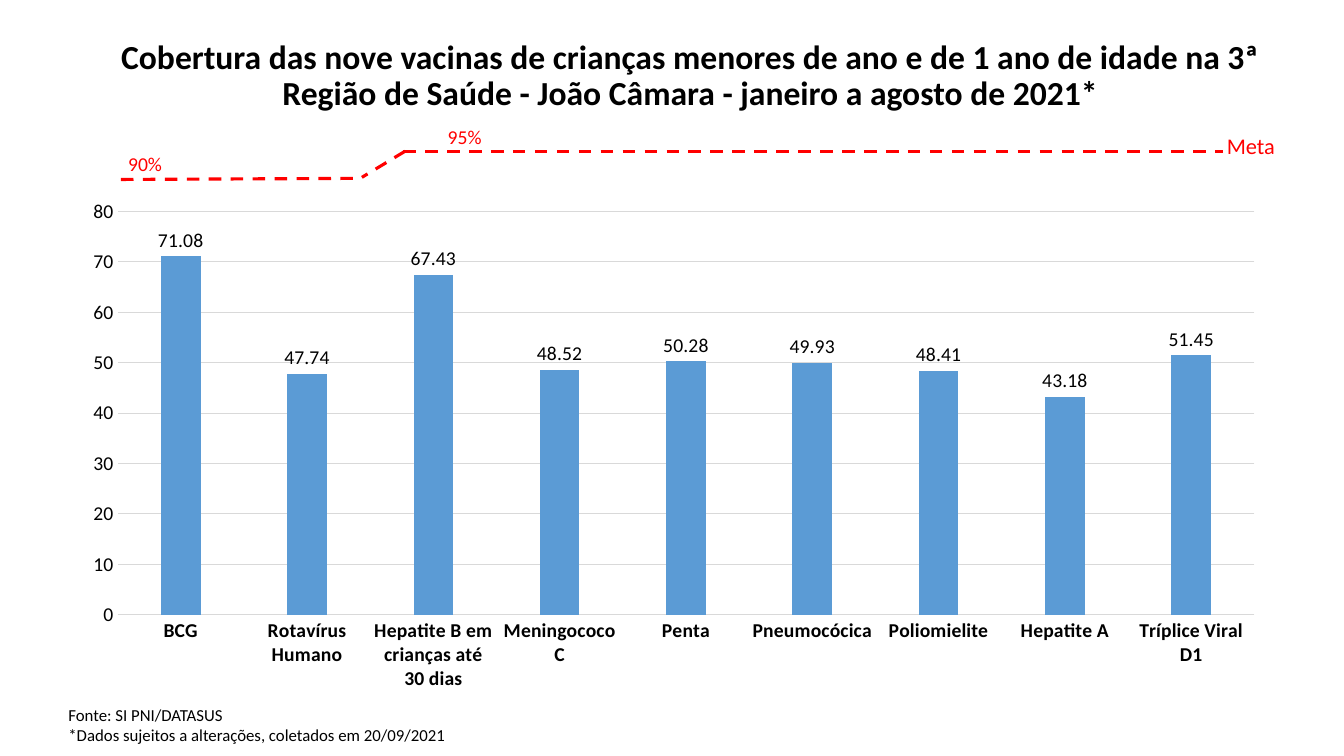
from lxml.etree import SubElement
from pptx import Presentation
from pptx.chart.data import CategoryChartData as Data
from pptx.dml.color import RGBColor as Rgb
from pptx.enum.chart import XL_CHART_TYPE as Kind
from pptx.enum.chart import XL_LABEL_POSITION as Spot
from pptx.enum.chart import XL_TICK_MARK as Tick
from pptx.enum.dml import MSO_LINE as Dash
from pptx.enum.shapes import MSO_CONNECTOR as Link
from pptx.enum.text import MSO_ANCHOR as Anchor
from pptx.enum.text import MSO_AUTO_SIZE as Auto
from pptx.enum.text import PP_ALIGN as Align
from pptx.oxml import parse_xml
from pptx.oxml.ns import nsdecls, qn
from pptx.util import Pt

BLACK, RED, GREY, BLUE = "000000", "FF0000", "D9D9D9", "5B9BD5"


def style(font, size, color=BLACK, bold=False):
    for key, val in {"name": "Calibri", "size": Pt(size), "bold": bold}.items():
        setattr(font, key, val)
    font.color.rgb = Rgb.from_string(color)


def stroke(line, color, width):
    line.color.rgb = Rgb.from_string(color)
    line.width = Pt(width)


deck = Presentation()
deck.slide_width, deck.slide_height = Pt(960), Pt(540)
slide = deck.slides.add_slide(deck.slide_layouts[5])
shapes = slide.shapes

# Title, raised by a deep bottom inset
title = shapes.title
place = {"left": 79, "top": 16, "width": 828, "height": 104}
for key, val in place.items():
    setattr(title, key, Pt(val))
frame = title.text_frame
frame.text = (
    "Cobertura das nove vacinas de crianças menores de ano e de 1 ano de idade "
    "na 3ª Região de Saúde - João Câmara - janeiro a agosto de 2021*"
)
look = {
    "word_wrap": True,
    "auto_size": Auto.NONE,
    "vertical_anchor": Anchor.MIDDLE,
    "margin_bottom": Pt(30),
}
for key, val in look.items():
    setattr(frame, key, val)
para = frame.paragraphs[0]
para.alignment = Align.CENTER
para.line_spacing = 0.9
style(para.runs[0].font, 24, bold=True)

# Coverage by vaccine
cover = {
    "BCG": 71.08,
    "Rotavírus Humano": 47.74,
    "Hepatite B em crianças até 30 dias": 67.43,
    "Meningococo C": 48.52,
    "Penta": 50.28,
    "Pneumocócica": 49.93,
    "Poliomielite": 48.41,
    "Hepatite A": 43.18,
    "Tríplice Viral D1": 51.45,
}
data = Data()
data.categories = list(cover)
data.add_series("Series 1", list(cover.values()))
chart = shapes.add_chart(
    Kind.COLUMN_CLUSTERED, Pt(49.7), Pt(142.5), Pt(857.5), Pt(358.5), data
).chart
chart.has_title = chart.has_legend = False
style(chart.font, 14)

plot = chart.plots[0]
look = {
    "gap_width": 219,
    "overlap": -27,
    "vary_by_categories": False,
    "has_data_labels": True,
}
for key, val in look.items():
    setattr(plot, key, val)
fill = plot.series[0].format.fill
fill.solid()
fill.fore_color.rgb = Rgb.from_string(BLUE)
labels = plot.data_labels
labels.show_value = True
labels.position = Spot.OUTSIDE_END
style(labels.font, 14)

cats, vals = chart.category_axis, chart.value_axis
for axis in (cats, vals):
    axis.major_tick_mark = axis.minor_tick_mark = Tick.NONE
    style(axis.tick_labels.font, 14, bold=axis is cats)
stroke(cats.format.line, GREY, 0.75)
scale = {"minimum_scale": 0, "maximum_scale": 80, "major_unit": 10}
for key, val in scale.items():
    setattr(vals, key, val)
vals.format.line.fill.background()
stroke(vals.major_gridlines.format.line, GREY, 0.75)

# Inner plot area, as fractions of the chart
area = chart._chartSpace.find(".//" + qn("c:plotArea"))
for old in area.findall(qn("c:layout")):
    area.remove(old)
box = parse_xml(f"<c:layout {nsdecls('c')}><c:manualLayout/></c:layout>")
parts = {
    "layoutTarget": "inner", "xMode": "edge", "yMode": "edge",
    "x": 0.04, "y": 0.022, "w": 0.947, "h": 0.805,
}
for key, val in parts.items():
    SubElement(box[0], qn("c:" + key)).set("val", str(val))
area.insert(0, box)

# Target line: 90% rising to 95%
steps = [
    (86.4, 128.2, 257, 127.4),
    (289.4, 108, 258.5, 126.7),
    (288, 108, 873.4, 108),
]
for ends in steps:
    link = shapes.add_connector(Link.STRAIGHT, *map(Pt, ends))
    stroke(link.line, RED, 2.25)
    link.line.dash_style = Dash.DASH
    SubElement(link._element.spPr, qn("a:effectLst"))

# Source note and target labels
source = "Fonte: SI PNI/DATASUS\n*Dados sujeitos a alterações, coletados em 20/09/2021"
notes = [
    (source, (41.8, 499.7, 501, 36), 12, BLACK, Align.LEFT),
    ("Meta", (869, 90.7, 49, 26.6), 16, RED, Align.CENTER),
    ("90%", (84.2, 105.1, 38.9, 24.5), 14, RED, Align.CENTER),
    ("95%", (312.5, 85.7, 38.9, 24.5), 14, RED, Align.CENTER),
]
for text, rect, size, color, align in notes:
    frame = shapes.add_textbox(*map(Pt, rect)).text_frame
    frame.text = text
    frame.word_wrap = text == source
    frame.auto_size = Auto.SHAPE_TO_FIT_TEXT
    for para in frame.paragraphs:
        para.alignment = align
        style(para.runs[0].font, size, color)

deck.save("out.pptx")
